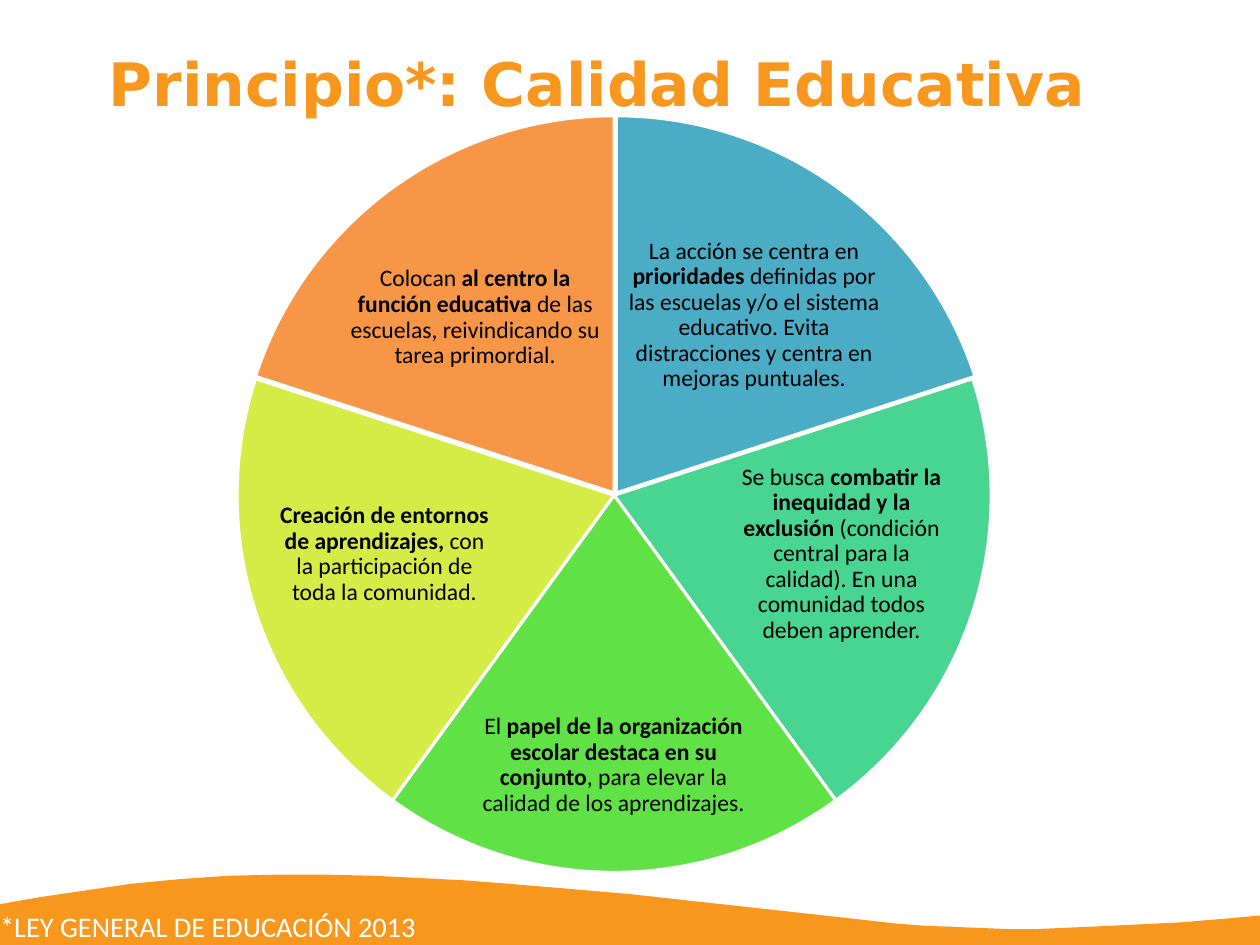
"""Builds the slide on educational quality: five pie sectors above a footer wave."""
from pptx import Presentation
from pptx.dml.color import RGBColor
from pptx.enum.shapes import MSO_SHAPE
from pptx.enum.text import MSO_ANCHOR, MSO_AUTO_SIZE, PP_ALIGN
from pptx.util import Inches, Pt

ORANGE, WHITE, BLACK = "F8971D", "FFFFFF", "000000"


def paint(color_format, hex_color):
    color_format.rgb = RGBColor.from_string(hex_color)


def apply_format(target, values):
    for attribute, value in values.items():
        setattr(target, attribute, value)


def_margins = ("margin_left", "margin_top", "margin_right", "margin_bottom")
no_margins = dict.fromkeys(def_margins, 0)
label_margins = dict.fromkeys(def_margins, Inches(0.02))

presentation = Presentation()
presentation.slide_width = Inches(11.11)
presentation.slide_height = Inches(8.33)
slide = presentation.slides.add_slide(presentation.slide_layouts[5])

wave_outline = [
    (244, 771), (201, 772), (158, 775), (116, 779), (75, 785), (34, 791),
    (0, 797), (0, 840), (1111, 840), (1111, 807), (1078, 810), (1042, 813),
    (1002, 815), (959, 817), (913, 819), (889, 819), (865, 818), (840, 817),
    (815, 816), (789, 814), (736, 808), (554, 788), (484, 782), (448, 779),
    (410, 776), (370, 774), (330, 772), (287, 771),
]
wave_builder = slide.shapes.build_freeform(*wave_outline[0], scale=Inches(0.01))
wave_builder.add_line_segments(wave_outline[1:], close=True)
wave = wave_builder.convert_to_shape()
wave.shadow.inherit = False
wave.fill.solid()
paint(wave.fill.fore_color, ORANGE)
wave.line.fill.background()
apply_format(wave.text_frame, {
    **no_margins, "margin_top": Inches(0.3), "word_wrap": True,
    "vertical_anchor": MSO_ANCHOR.TOP,
})
footnote = wave.text_frame.paragraphs[0]
footnote.alignment = PP_ALIGN.LEFT
footnote_run = footnote.add_run()
footnote_run.text = "*LEY GENERAL DE EDUCACIÓN 2013"
apply_format(footnote_run.font, {"name": "Calibri", "size": Pt(18)})
paint(footnote_run.font.color, WHITE)

title = slide.shapes.title
apply_format(title, {
    "left": Inches(0.96), "top": Inches(0.43),
    "width": Inches(9.2), "height": Inches(0.88),
})
apply_format(title.text_frame, {
    **no_margins, "word_wrap": True, "auto_size": MSO_AUTO_SIZE.NONE,
    "vertical_anchor": MSO_ANCHOR.TOP,
})
heading = title.text_frame.paragraphs[0]
apply_format(heading, {"alignment": PP_ALIGN.LEFT, "line_spacing": Pt(44.1)})
heading_run = heading.add_run()
heading_run.text = "Principio*: Calidad Educativa"
apply_format(heading_run.font, {"name": "DejaVu Sans", "size": Pt(38), "bold": True})
paint(heading_run.font.color, ORANGE)

sectors = [
    ("4BACC6", (2.11, 1.02), (5.52, 2.01, 2.26, 1.54), [
        ("La acción se centra en ", False),
        ("prioridades ", True),
        ("definidas por las escuelas y/o el sistema educativo. "
         "Evita distracciones y centra en mejoras puntuales.", False)]),
    ("48D491", (2.09, 1.04), (6.43, 4.05, 1.98, 1.67), [
        ("Se busca ", False),
        ("combatir la inequidad y la exclusión", True),
        (" (condición central para la calidad). "
         "En una comunidad todos deben aprender.", False)]),
    ("60E146", (2.09, 1.04), (4.22, 6.03, 2.38, 1.43), [
        ("El ", False),
        ("papel de la organización escolar destaca en su conjunto", True),
        (", para elevar la calidad de los aprendizajes.", False)]),
    ("D5EC46", (2.09, 1.04), (2.4, 4.05, 1.98, 1.67), [
        ("Creación de entornos de aprendizajes, ", True),
        ("con la participación de toda la comunidad.", False)]),
    ("F79646", (2.09, 1.02), (3.06, 2.03, 2.26, 1.54), [
        ("Colocan ", False),
        ("al centro la función educativa", True),
        (" de las escuelas, reivindicando su tarea primordial.", False)]),
]
diameter = Inches(6.65)
sweep = 360 / len(sectors)
adjustment_per_degree = 0.6

wheel = slide.shapes.add_group_shape()
for index, (fill, corner, label_box, phrases) in enumerate(sectors):
    sector = wheel.shapes.add_shape(
        MSO_SHAPE.PIE, *map(Inches, corner), diameter, diameter)
    start = 270 + index * sweep
    for side, angle in enumerate((start, start + sweep)):
        turn = angle if angle < 360 else angle - 360
        sector.adjustments[side] = turn * adjustment_per_degree
    sector.shadow.inherit = False
    sector.fill.solid()
    paint(sector.fill.fore_color, fill)
    paint(sector.line.color, WHITE)
    sector.line.width = Pt(2)

    label = wheel.shapes.add_textbox(*map(Inches, label_box))
    apply_format(label.text_frame, {
        **label_margins, "word_wrap": True, "vertical_anchor": MSO_ANCHOR.MIDDLE,
    })
    principle = label.text_frame.paragraphs[0]
    apply_format(principle, {"alignment": PP_ALIGN.CENTER, "line_spacing": 0.9})
    for words, bold in phrases:
        phrase = principle.add_run()
        phrase.text = words
        apply_format(phrase.font, {"name": "Calibri", "size": Pt(15), "bold": bold})
        paint(phrase.font.color, BLACK)

presentation.save("out.pptx")
